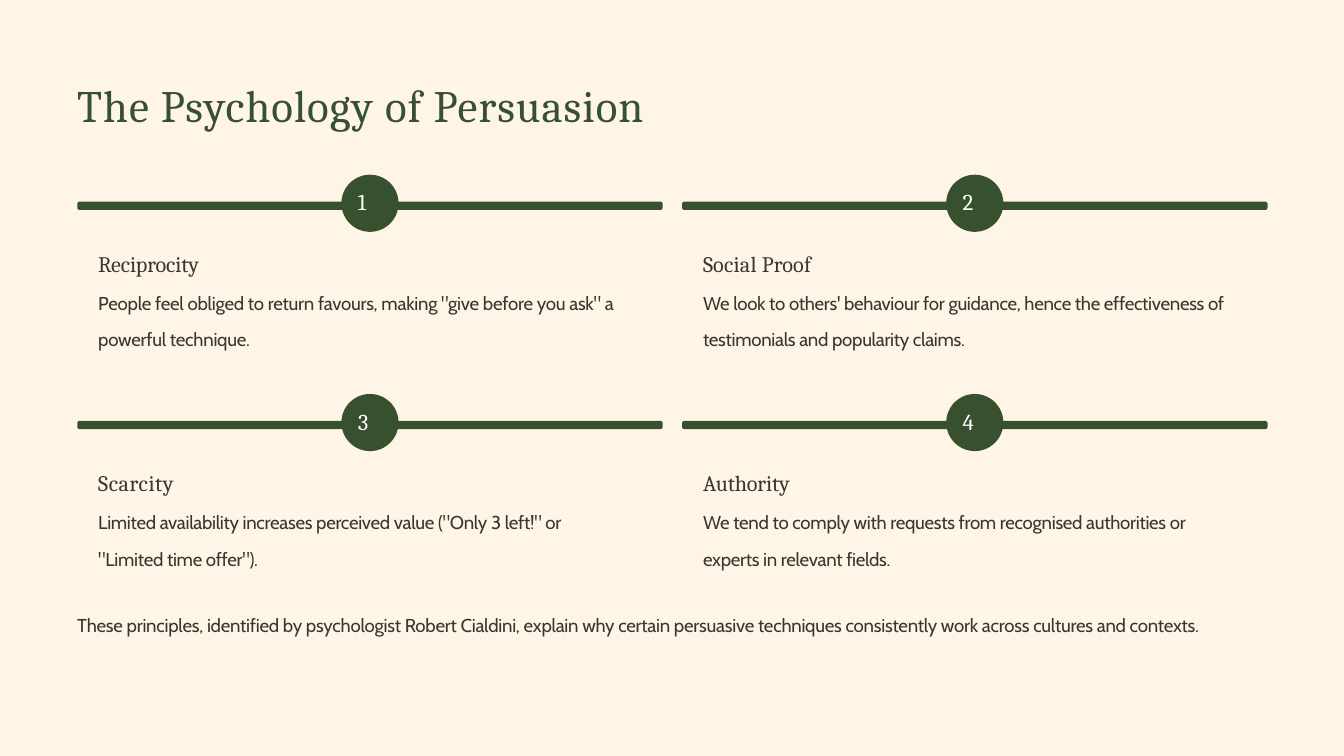
import math

import pptx
import pptx.dml.color
import pptx.enum.shapes
import pptx.enum.text
import pptx.util
from pptx.util import Inches, Pt

GREEN, INK, CREAM, WHITE = "37502E", "3A362F", "FEF5E7", "FFFFFF"
HEADING_FONT, BODY_FONT = "Cambria", "Cabin"
SLIDE_WIDTH, SLIDE_HEIGHT = 16, 9
COLUMN_PITCH, ROW_PITCH = 7.2, 2.61

# heading, heading spacing, body, body spacing, text width
PRINCIPLES = [
    ("Reciprocity", -0.1,
     'People feel obliged to return favours, making "give before you ask" a powerful technique.',
     -0.2, 6.34),
    ("Social Proof", 0.2,
     "We look to others' behaviour for guidance, hence the effectiveness of "
     "testimonials and popularity claims.", -0.24, 6.37),
    ("Scarcity", 0.5,
     'Limited availability increases perceived value ("Only 3 left!" or "Limited time offer").',
     -0.22, 5.73),
    ("Authority", -0.1,
     "We tend to comply with requests from recognised authorities or experts in relevant fields.",
     -0.24, 5.89),
]


def color(value):
    return pptx.dml.color.RGBColor.from_string(value)


def style_paragraph(paragraph, font_name, size, hex_color, spacing=0.0, before=1):
    """Format the runs of a paragraph; spacing is letter spacing in points."""
    paragraph.space_before = Pt(before)
    for run in paragraph.runs:
        run.font.name = font_name
        run.font.size = Pt(size)
        run.font.color.rgb = color(hex_color)
        run._r.get_or_add_rPr().set("spc", str(round(spacing * 100)))


def fill_plain(shape, hex_color):
    shape.shadow.inherit = False
    shape.fill.solid()
    shape.fill.fore_color.rgb = color(hex_color)
    shape.line.fill.background()


def add_text(slide, left, top, width, height, lines):
    """Add a text box with one paragraph for each line and return its paragraphs."""
    box = slide.shapes.add_textbox(Inches(left), Inches(top), Inches(width), Inches(height))
    frame = box.text_frame
    frame.word_wrap = True
    frame.margin_left = Inches(0.01)
    frame.margin_top = Inches(0.01)
    frame.margin_right = frame.margin_bottom = 0
    frame.vertical_anchor = pptx.enum.text.MSO_ANCHOR.TOP
    frame.text = "\n".join(lines)
    return frame.paragraphs


def arc(center_x, center_y, radius, start, end, steps):
    """Return points of an arc between two angles in radians."""
    angles = [start + (end - start) * step / steps for step in range(steps + 1)]
    return [(center_x + radius * math.cos(angle), center_y + radius * math.sin(angle))
            for angle in angles]


def add_marker(slide, left, top, number):
    """Add a bar that swells to a numbered disc at its middle."""
    width, radius, corner = 6.97, 0.34, 0.03
    bar_top, bar_bottom = top + 0.32, top + 0.42
    right, center_x, center_y = left + width, left + width / 2, top + radius
    upper = math.asin((bar_top - center_y) / radius)
    lower = math.asin((bar_bottom - center_y) / radius)
    quarter = math.pi / 2
    points = [
        *arc(right - corner, bar_top + corner, corner, 0, -quarter, 4),
        *arc(center_x, center_y, radius, upper, -math.pi - upper, 32),
        *arc(left + corner, bar_top + corner, corner, -quarter, -2 * quarter, 4),
        *arc(left + corner, bar_bottom - corner, corner, 2 * quarter, quarter, 4),
        *arc(center_x, center_y, radius, math.pi - lower, lower, 32),
        *arc(right - corner, bar_bottom - corner, corner, quarter, 0, 4),
    ]
    first, *others = [(Inches(x), Inches(y)) for x, y in points]
    builder = slide.shapes.build_freeform(*first)
    builder.add_line_segments(others, close=True)
    fill_plain(builder.convert_to_shape(), GREEN)

    label, = add_text(slide, left + 3.33, top + 0.15, 0.18, 0.35, [str(number)])
    style_paragraph(label, HEADING_FONT, 19.5, WHITE, -0.5)


def add_principle(slide, left, top, number, principle):
    heading, heading_spacing, body, body_spacing, width = principle
    add_marker(slide, left, top, number)
    title, text = add_text(slide, left + 0.24, top + 0.89, width, 1.21, [heading, body])
    style_paragraph(title, HEADING_FONT, 19, INK, heading_spacing)
    style_paragraph(text, BODY_FONT, 16, INK, body_spacing, before=0.1)
    text.line_spacing = Pt(31.5)


def add_backdrop(slide):
    backdrop = slide.shapes.add_shape(
        pptx.enum.shapes.MSO_SHAPE.RECTANGLE, 0, 0,
        Inches(SLIDE_WIDTH), Inches(SLIDE_HEIGHT))
    fill_plain(backdrop, CREAM)


def add_title(slide, left, top):
    title, = add_text(slide, left, top, 9.47, 0.85, ["The Psychology of Persuasion"])
    style_paragraph(title, HEADING_FONT, 38.5, GREEN, 0.9)


def add_summary(slide, left, top):
    summary, = add_text(slide, left, top, 13.83, 0.29, [
        "These principles, identified by psychologist Robert Cialdini, explain why certain "
        "persuasive techniques consistently work across cultures and contexts."])
    style_paragraph(summary, BODY_FONT, 16, INK, -0.2)


def main():
    presentation = pptx.Presentation()
    presentation.slide_width = Inches(SLIDE_WIDTH)
    presentation.slide_height = Inches(SLIDE_HEIGHT)
    slide = presentation.slides.add_slide(presentation.slide_layouts[6])

    add_backdrop(slide)
    add_title(slide, 0.91, 0.91)
    for index, principle in enumerate(PRINCIPLES):
        row, column = divmod(index, 2)
        add_principle(slide, 0.92 + column * COLUMN_PITCH, 2.08 + row * ROW_PITCH,
                      index + 1, principle)
    add_summary(slide, 0.91, 7.3)
    presentation.save("out.pptx")


if __name__ == "__main__":
    main()
